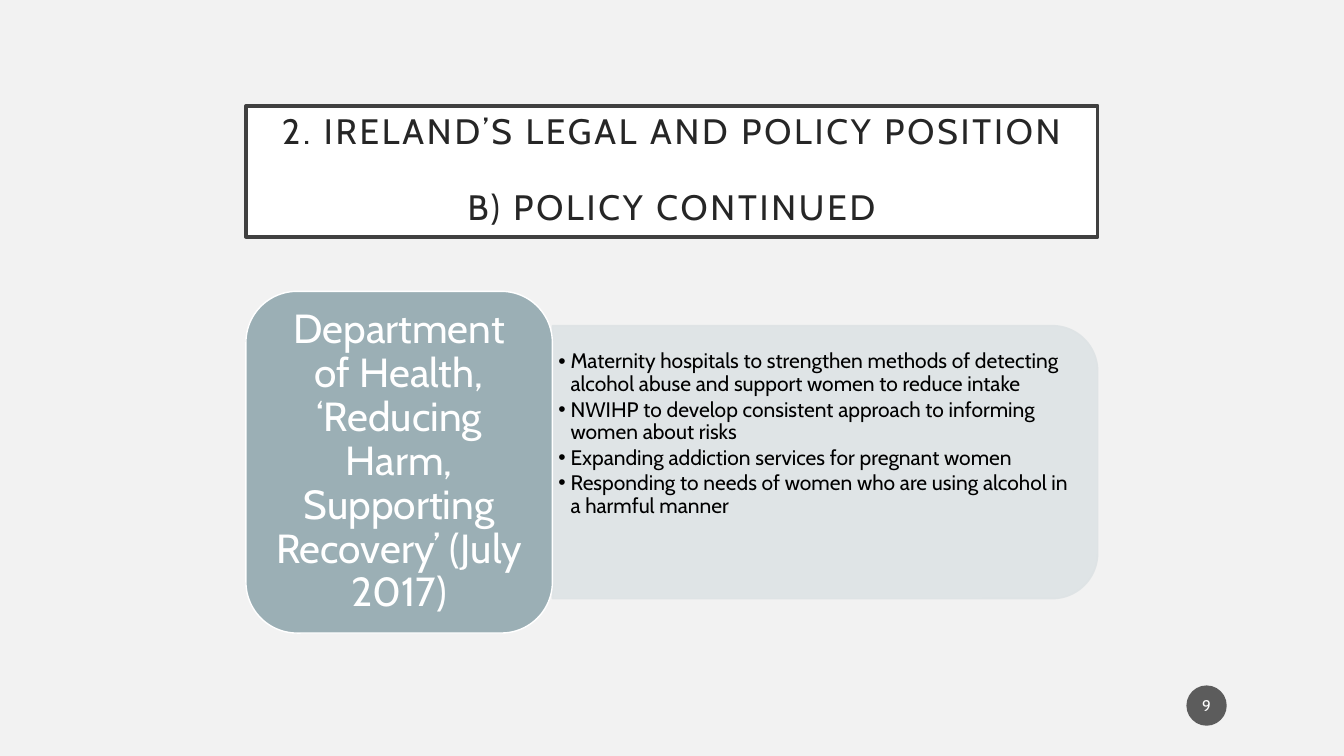
from pptx import Presentation, util as u
from pptx.dml.color import RGBColor
from pptx.enum import shapes, text
from pptx.oxml.ns import qn
from lxml import etree

LEFT, WIDTH = 2.44, 8.45        # column shared by title and diagram
LABEL_W, LABEL_H = 3.04, 3.39
MIDDLE = 4.585                  # vertical centre of the diagram
PANEL_W, PANEL_H = WIDTH - LABEL_W, 2.71
BULLETS = [
    "Maternity hospitals to strengthen methods of detecting alcohol abuse and support women to reduce intake",
    "NWIHP to develop consistent approach to informing women about risks",
    "Expanding addiction services for pregnant women",
    "Responding to needs of women who are using alcohol in a harmful manner",
]


def write(sp, lines, size, color, align="CENTER", anchor="MIDDLE", margins=(0.1, 0.05),
          spacing=0.9, before=0, after=0, tracking=0, hang=0):
    """Fill sp with one paragraph per line; margins are (sides, top and bottom) in inches."""
    tf = sp.text_frame
    tf.word_wrap = True
    tf.auto_size = text.MSO_AUTO_SIZE.NONE
    tf.vertical_anchor = getattr(text.MSO_ANCHOR, anchor)
    tf.margin_left = tf.margin_right = u.Inches(margins[0])
    tf.margin_top = tf.margin_bottom = u.Inches(margins[1])
    for i, line in enumerate(lines):
        p = tf.paragraphs[0] if i == 0 else tf.add_paragraph()
        p.alignment = getattr(text.PP_ALIGN, align)
        p.line_spacing = spacing
        p.space_before = u.Pt(before if i else 0)
        p.space_after = u.Pt(after)
        if hang:
            pPr = p._p.get_or_add_pPr()
            pPr.set("marL", str(u.Inches(hang)))
            pPr.set("indent", str(-u.Inches(hang)))
        r = p.add_run()
        r.text = line
        r.font.name, r.font.size = "Cabin", u.Pt(size)
        r.font.color.rgb = RGBColor.from_string(color)
        if tracking:
            r._r.get_or_add_rPr().set("spc", str(tracking * 100))


def paint(sp, fill, line=None, width=1, alpha=100):
    sp.fill.solid()
    sp.fill.fore_color.rgb = RGBColor.from_string(fill)
    if line:
        sp.line.color.rgb = RGBColor.from_string(line)
        sp.line.width = u.Pt(width)
    else:
        sp.line.fill.background()
    if alpha < 100:
        for clr in sp._element.spPr.iter(qn("a:srgbClr")):
            etree.SubElement(clr, qn("a:alpha")).set("val", str(alpha * 1000))


prs = Presentation()
prs.slide_width, prs.slide_height = u.Inches(13.333), u.Inches(7.5)
s = prs.slides.add_slide(prs.slide_layouts[1])
s.background.fill.solid()
s.background.fill.fore_color.rgb = RGBColor.from_string("F2F2F2")

# Title
title, body = s.shapes.title, s.placeholders[1]
title.left, title.top, title.width, title.height = map(u.Inches, (LEFT, 1.05, WIDTH, 1.3))
paint(title, "FFFFFF", "404040", 2.5)
write(title, ["2. IRELAND’S LEGAL AND POLICY POSITION", "B) POLICY CONTINUED"], 25.2, "262626",
      margins=(0.2, 0.2), before=27, tracking=2)

# Panel: an upright shape turned a quarter, so its width and height swap
panel_x = LEFT + LABEL_W
panel = s.shapes.add_shape(
    shapes.MSO_SHAPE.ROUND_2_SAME_RECTANGLE,
    u.Inches(panel_x + (PANEL_W - PANEL_H) / 2), u.Inches(MIDDLE - PANEL_W / 2),
    u.Inches(PANEL_H), u.Inches(PANEL_W))
panel.rotation = 90
panel.shadow.inherit = False
paint(panel, "DEE3E5", "DEE3E5", alpha=90)

# Bullets, placed above the panel in the stacking order
s.shapes._spTree.append(body._element)
body.left, body.top, body.width, body.height = map(u.Inches, (panel_x, 3.45, 5.28, 2.3))
write(body, BULLETS, 15, "000000", align="LEFT", anchor="TOP", margins=(0.06, 0.03),
      after=2, hang=0.12)

# Label
label = s.shapes.add_shape(
    shapes.MSO_SHAPE.ROUNDED_RECTANGLE, u.Inches(LEFT), u.Inches(MIDDLE - LABEL_H / 2),
    u.Inches(LABEL_W), u.Inches(LABEL_H))
label.shadow.inherit = False
paint(label, "9BAFB5", "FFFFFF")
write(label, ["Department of Health, ‘Reducing Harm, Supporting Recovery’ (July 2017)"], 29, "FFFFFF",
      margins=(0.12, 0.06))

# Slide number
badge = s.shapes.add_shape(shapes.MSO_SHAPE.OVAL, *map(u.Inches, (11.77, 6.8, 0.4, 0.4)))
badge.shadow.inherit = False
paint(badge, "1D1D1D", alpha=70)
write(badge, ["9"], 11, "FFFFFF", margins=(0.02, 0.05), spacing=1.0)

prs.save("out.pptx")
